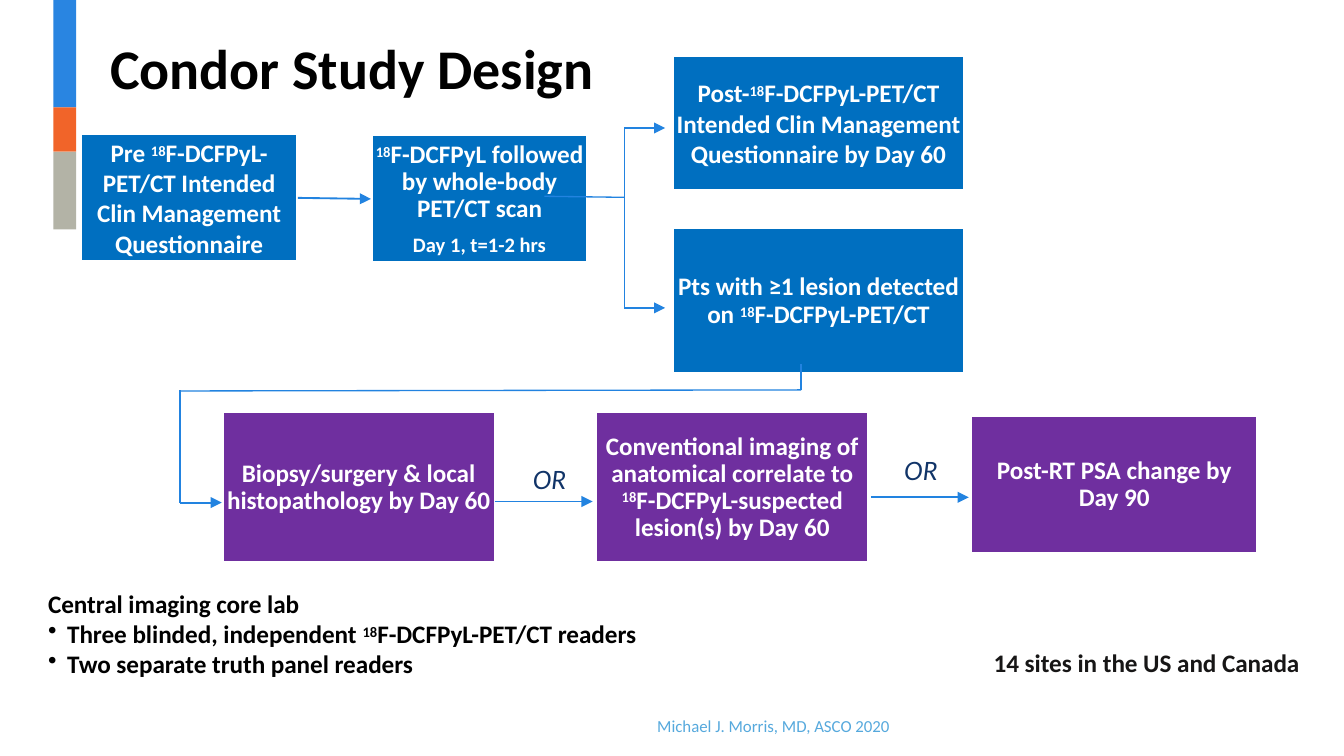
from lxml.etree import SubElement
from pptx import Presentation
from pptx.dml.color import RGBColor
from pptx.enum.shapes import MSO_CONNECTOR, MSO_SHAPE
from pptx.enum.text import MSO_ANCHOR, PP_ALIGN
from pptx.oxml.ns import qn
from pptx.util import Cm, Pt

BLUE, PURPLE, LINE = "006FC0", "6F2F9F", "2283E0"


def color(value):
    return RGBColor.from_string(value)


class StudySlide:
    font_name = "Calibri"
    text_size = 13.5

    def __init__(self, presentation):
        self.slide = presentation.slides.add_slide(presentation.slide_layouts[5])

    def prepare_frame(self, text_frame, anchor=MSO_ANCHOR.TOP, wrap=True):
        text_frame.margin_left = text_frame.margin_right = 0
        text_frame.margin_top = text_frame.margin_bottom = 0
        text_frame.vertical_anchor = anchor
        text_frame.word_wrap = wrap

    def add_lines(self, paragraph, text, font_color, size=None, bold=True,
                  italic=False, font_name=None):
        """Add lines split by newlines; text between ^ marks is superscript."""
        for line_number, line in enumerate(text.split("\n")):
            if line_number:
                paragraph.add_line_break()
            for part_number, part in enumerate(line.split("^")):
                if not part:
                    continue
                run = paragraph.add_run()
                run.text = part
                run.font.name = font_name or self.font_name
                run.font.size = Pt(size or self.text_size)
                run.font.bold = bold
                run.font.italic = italic
                run.font.color.rgb = color(font_color)
                if part_number % 2:
                    run.font._element.set("baseline", "25000")

    def title(self, text, left, top, width, height):
        shape = self.slide.shapes.title
        shape.left, shape.top = Cm(left), Cm(top)
        shape.width, shape.height = Cm(width), Cm(height)
        self.prepare_frame(shape.text_frame)
        paragraph = shape.text_frame.paragraphs[0]
        paragraph.alignment = PP_ALIGN.LEFT
        self.add_lines(paragraph, text, "000000", size=30)

    def rectangle(self, left, top, width, height, fill, outline=None):
        shape = self.slide.shapes.add_shape(
            MSO_SHAPE.RECTANGLE, Cm(left), Cm(top), Cm(width), Cm(height))
        shape.shadow.inherit = False
        shape.fill.solid()
        shape.fill.fore_color.rgb = color(fill)
        if outline:
            shape.line.color.rgb = color(outline)
            shape.line.width = Pt(2)
        else:
            shape.line.fill.background()
        return shape

    def step(self, text, left, top, width, height, fill, spacing=None, note=None):
        shape = self.rectangle(left, top, width, height, fill, "FFFFFF")
        text_frame = shape.text_frame
        self.prepare_frame(text_frame, MSO_ANCHOR.MIDDLE, wrap=False)
        paragraph = text_frame.paragraphs[0]
        paragraph.alignment = PP_ALIGN.CENTER
        if spacing:
            paragraph.line_spacing = Pt(spacing)
        self.add_lines(paragraph, text, "FFFFFF")
        if note:
            paragraph = text_frame.add_paragraph()
            paragraph.alignment = PP_ALIGN.CENTER
            paragraph.space_before = Pt(5)
            self.add_lines(paragraph, note, "FFFFFF", size=11)
        return shape

    def label(self, text, left, top, width, height, font_color, bullets=(), **style):
        box = self.slide.shapes.add_textbox(Cm(left), Cm(top), Cm(width), Cm(height))
        self.prepare_frame(box.text_frame)
        self.add_lines(box.text_frame.paragraphs[0], text, font_color, **style)
        for bullet in bullets:
            paragraph = box.text_frame.add_paragraph()
            properties = paragraph._p.get_or_add_pPr()
            properties.set("marL", str(Cm(0.36)))
            properties.set("indent", str(-Cm(0.36)))
            SubElement(properties, qn("a:buChar")).set("char", "•")
            self.add_lines(paragraph, bullet, font_color, **style)

    def connector(self, x1, y1, x2, y2, arrow=False):
        connector = self.slide.shapes.add_connector(
            MSO_CONNECTOR.STRAIGHT, Cm(x1), Cm(y1), Cm(x2), Cm(y2))
        connector.line.color.rgb = color(LINE)
        connector.line.width = Pt(1 if arrow else 0.72)
        if arrow:
            line = connector.line._get_or_add_ln()
            SubElement(line, qn("a:tailEnd")).set("type", "triangle")
        SubElement(connector._element.spPr, qn("a:effectLst"))
        return connector


def main():
    presentation = Presentation()
    presentation.slide_width, presentation.slide_height = Cm(25.4), Cm(14.29)
    page = StudySlide(presentation)

    # Colour strip and title
    top = 0
    for height, fill in ((2.03, "2985E1"), (0.84, "F16429"), (1.47, "B3B3A6")):
        page.rectangle(1.01, top, 0.43, height, fill)
        top += height
    page.title("Condor Study Design", 2.08, 0.64, 9.6, 1.35)

    # Imaging steps
    before = page.step(
        "Pre ^18^F-DCFPyL-\nPET/CT Intended\nClin Management\nQuestionnaire",
        1.52, 2.52, 4.11, 2.44, BLUE)
    scan = page.step("^18^F-DCFPyL followed\nby whole-body\nPET/CT scan",
                     7.01, 2.54, 4.11, 2.44, BLUE, 14.5, "Day 1, t=1-2 hrs")
    page.step("Post-^18^F-DCFPyL-PET/CT\nIntended Clin Management\n"
              "Questionnaire by Day 60", 12.7, 1.04, 5.54, 2.57, BLUE)
    page.step("Pts with ≥1 lesion detected\non ^18^F-DCFPyL-PET/CT",
              12.7, 4.29, 5.54, 2.77, BLUE, 15.3)

    # Ways to confirm a lesion
    page.step("Biopsy/surgery & local\nhistopathology by Day 60",
              4.19, 7.77, 5.18, 2.88, PURPLE, 14.5)
    page.step("Conventional imaging of\nanatomical correlate to\n"
              "^18^F-DCFPyL-suspected\nlesion(s) by Day 60",
              11.25, 7.77, 5.18, 2.88, PURPLE, 14.5)
    page.step("Post-RT PSA change by\nDay 90", 18.34, 7.85, 5.44, 2.62, PURPLE, 14.5)

    # Flow from questionnaire to scan, then fork to both branches
    arrow = page.connector(5.63, 3.74, 7.01, 3.76, arrow=True)
    arrow.begin_connect(before, 3)
    arrow.end_connect(scan, 1)
    fork_x, branches = 11.8, (2.42, 5.82)
    page.connector(10.29, 3.71, fork_x, 3.73)
    page.connector(fork_x, branches[0], fork_x, branches[1])
    for branch_y in branches:
        page.connector(fork_x, branch_y, 12.57, branch_y, arrow=True)

    # Return path to the lower row
    page.connector(15.14, 6.88, 15.14, 7.37)
    page.connector(3.4, 7.39, 15.14, 7.37)
    page.connector(3.4, 7.38, 3.4, 9.5)
    page.connector(3.4, 9.5, 4.19, 9.5, arrow=True)

    # Alternatives in the lower row
    for start_x, arrow_y, text_x, text_y in ((9.35, 9.48, 10.07, 8.78),
                                             (16.46, 9.4, 17.09, 8.61)):
        page.connector(start_x, arrow_y, start_x + 1.85, arrow_y, arrow=True)
        page.label("OR", text_x, text_y, 0.9, 0.62, "113468",
                   bold=False, italic=True, font_name="Lato")

    # Notes and citation
    page.label("Central imaging core lab", 0.91, 11.12, 11.4, 1.75, "000000",
               bullets=("Three blinded, independent ^18^F-DCFPyL-PET/CT readers",
                        "Two separate truth panel readers"))
    page.label("14 sites in the US and Canada", 18.78, 12.23, 6.1, 0.6, "171616")
    page.label("Michael J. Morris, MD, ASCO 2020", 12.42, 13.53, 4.8, 0.4, "56A9DD",
               size=9, bold=False)

    presentation.save("out.pptx")


if __name__ == "__main__":
    main()
